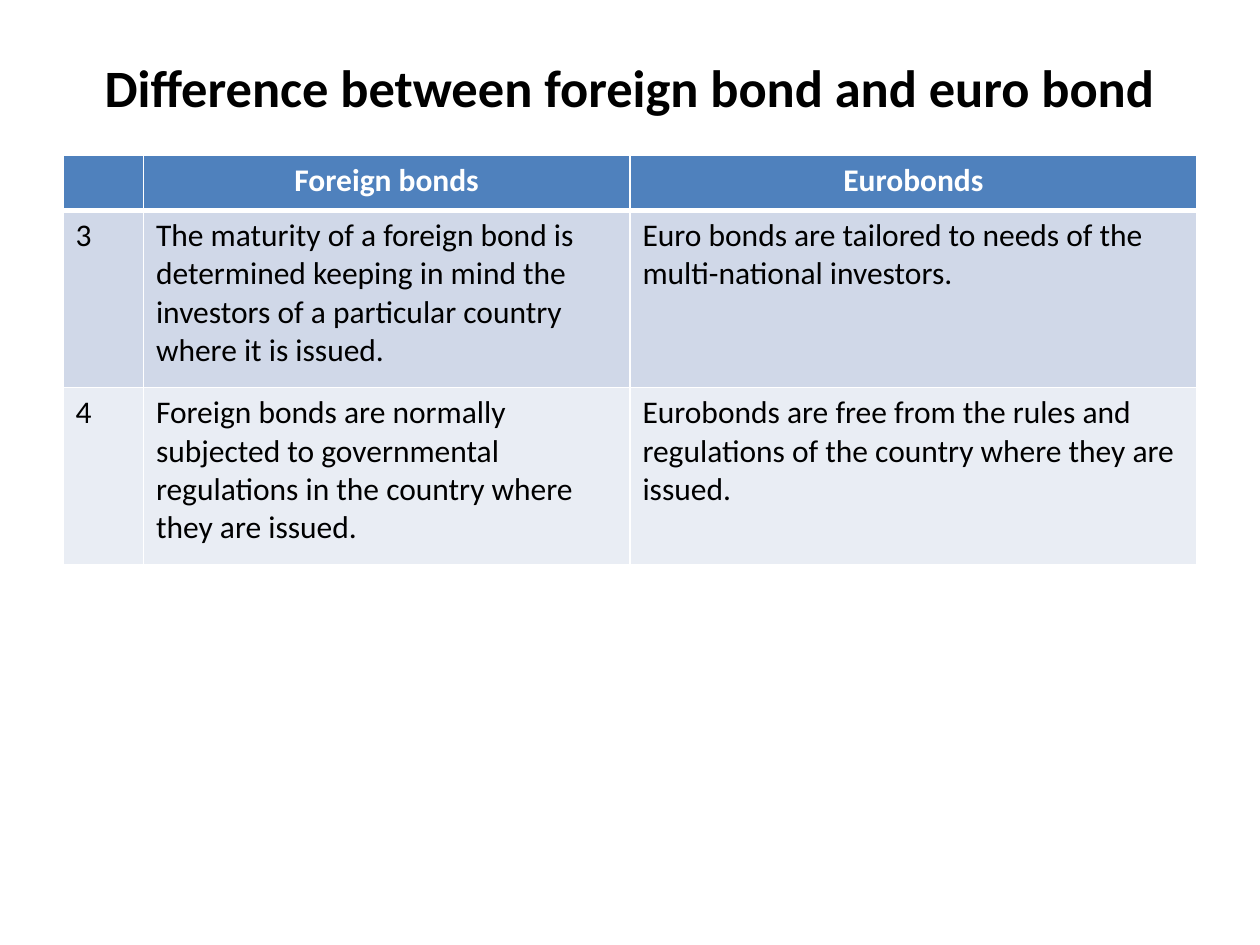
from dataclasses import dataclass

from lxml import etree
from pptx import Presentation
from pptx.dml.color import RGBColor
from pptx.enum.text import MSO_ANCHOR, PP_ALIGN
from pptx.oxml.ns import qn
from pptx.util import Pt

CENTER, LEFT = PP_ALIGN.CENTER, PP_ALIGN.LEFT
MIDDLE = MSO_ANCHOR.MIDDLE
TITLE_ONLY = 5


@dataclass(frozen=True)
class Theme:
    font: str = "Calibri"
    title_size: int = 30
    table_size: int = 18
    text: str = "000000"
    header_text: str = "FFFFFF"
    header_fill: str = "4F81BD"
    bands: tuple = ("D0D8E8", "E9EDF4")
    grid: str = "FFFFFF"
    grid_width: int = 1
    header_rule: int = 3


THEME = Theme()

COLUMN_WIDTHS = (46, 278, 324)
ROW_HEIGHTS = (31.5, 101.25, 101.25)
COMPARISON = (
    ("", "Foreign bonds", "Eurobonds"),
    ("3",
     "The maturity of a foreign bond is determined keeping in mind the "
     "investors of a particular country where it is issued.",
     "Euro bonds are tailored to needs of the multi-national investors."),
    ("4",
     "Foreign bonds are normally subjected to governmental regulations in "
     "the country where they are issued.",
     "Eurobonds are free from the rules and regulations of the country "
     "where they are issued."),
)


def format_paragraph(paragraph, size, color, bold, align):
    paragraph.alignment = align
    paragraph.font.name = THEME.font
    paragraph.font.size = Pt(size)
    paragraph.font.bold = bold
    paragraph.font.color.rgb = RGBColor.from_string(color)


def set_borders(cell, top, bottom):
    """Draw the cell's grid lines; side lines always use the grid width."""
    properties = cell._tc.get_or_add_tcPr()
    widths = {"a:lnL": THEME.grid_width, "a:lnR": THEME.grid_width,
              "a:lnT": top, "a:lnB": bottom}
    # Border lines must come before the fill
    for position, (tag, width) in enumerate(widths.items()):
        line = etree.Element(qn(tag), w=str(Pt(width)))
        fill = etree.SubElement(line, qn("a:solidFill"))
        etree.SubElement(fill, qn("a:srgbClr"), val=THEME.grid)
        properties.insert(position, line)


def add_title(slide, text):
    title = slide.shapes.title
    title.left, title.top, title.width, title.height = (
        Pt(36), Pt(21.6), Pt(648), Pt(55.4))
    title.text_frame.text = text
    title.text_frame.vertical_anchor = MIDDLE
    format_paragraph(title.text_frame.paragraphs[0], THEME.title_size,
                     THEME.text, True, CENTER)


def fill_cell(cell, text, row):
    header = row == 0
    cell.text = text
    cell.fill.solid()
    fill = THEME.header_fill if header else THEME.bands[(row - 1) % 2]
    cell.fill.fore_color.rgb = RGBColor.from_string(fill)
    format_paragraph(cell.text_frame.paragraphs[0], THEME.table_size,
                     THEME.header_text if header else THEME.text,
                     header, CENTER if header else LEFT)
    set_borders(cell,
                top=THEME.header_rule if row == 1 else THEME.grid_width,
                bottom=THEME.header_rule if header else THEME.grid_width)


def add_comparison_table(slide):
    table = slide.shapes.add_table(
        len(ROW_HEIGHTS), len(COLUMN_WIDTHS), Pt(36), Pt(88.6),
        Pt(sum(COLUMN_WIDTHS)), Pt(sum(ROW_HEIGHTS))).table
    for column, width in zip(table.columns, COLUMN_WIDTHS):
        column.width = Pt(width)
    for row, height in zip(table.rows, ROW_HEIGHTS):
        row.height = Pt(height)
    for row, texts in enumerate(COMPARISON):
        for column, text in enumerate(texts):
            fill_cell(table.cell(row, column), text, row)


def main():
    presentation = Presentation()
    presentation.slide_width, presentation.slide_height = Pt(720), Pt(540)
    slide = presentation.slides.add_slide(
        presentation.slide_layouts[TITLE_ONLY])

    # Heading
    add_title(slide, "Difference between foreign bond and euro bond")
    # Side-by-side comparison
    add_comparison_table(slide)

    presentation.save("out.pptx")


if __name__ == "__main__":
    main()
